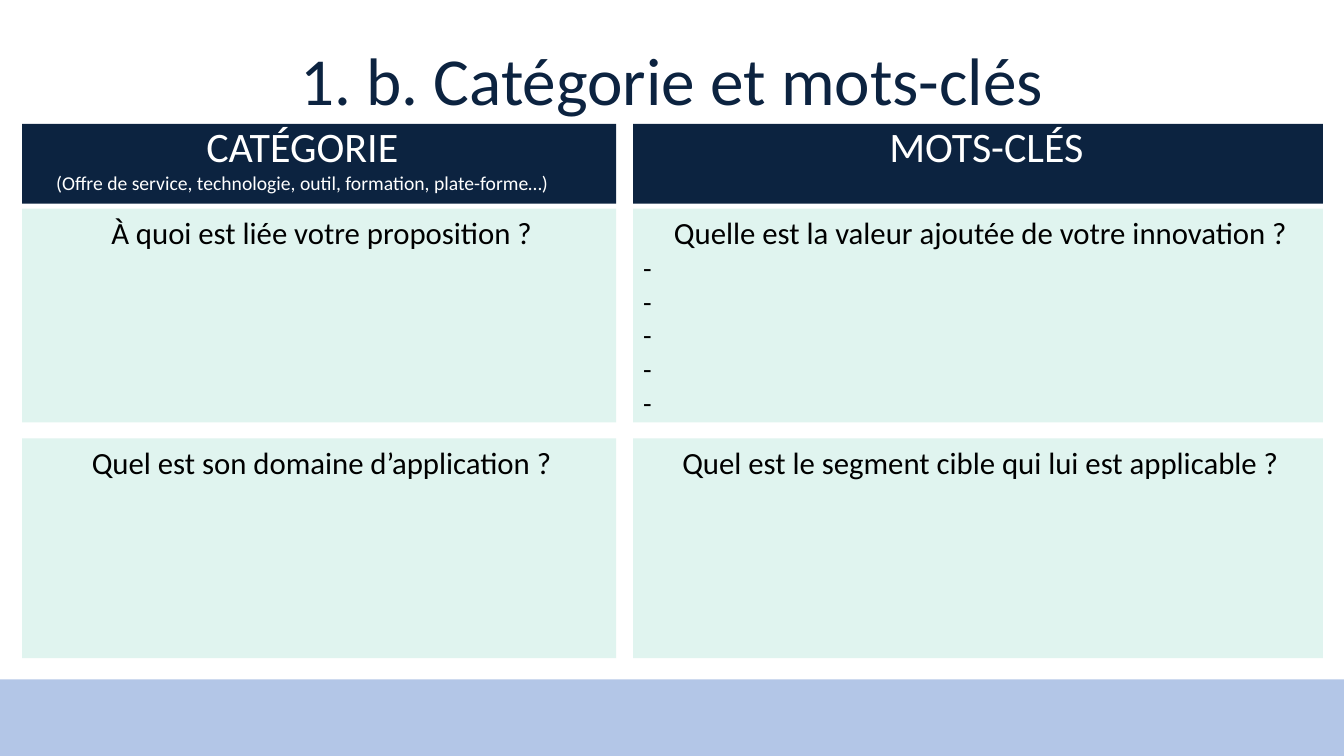
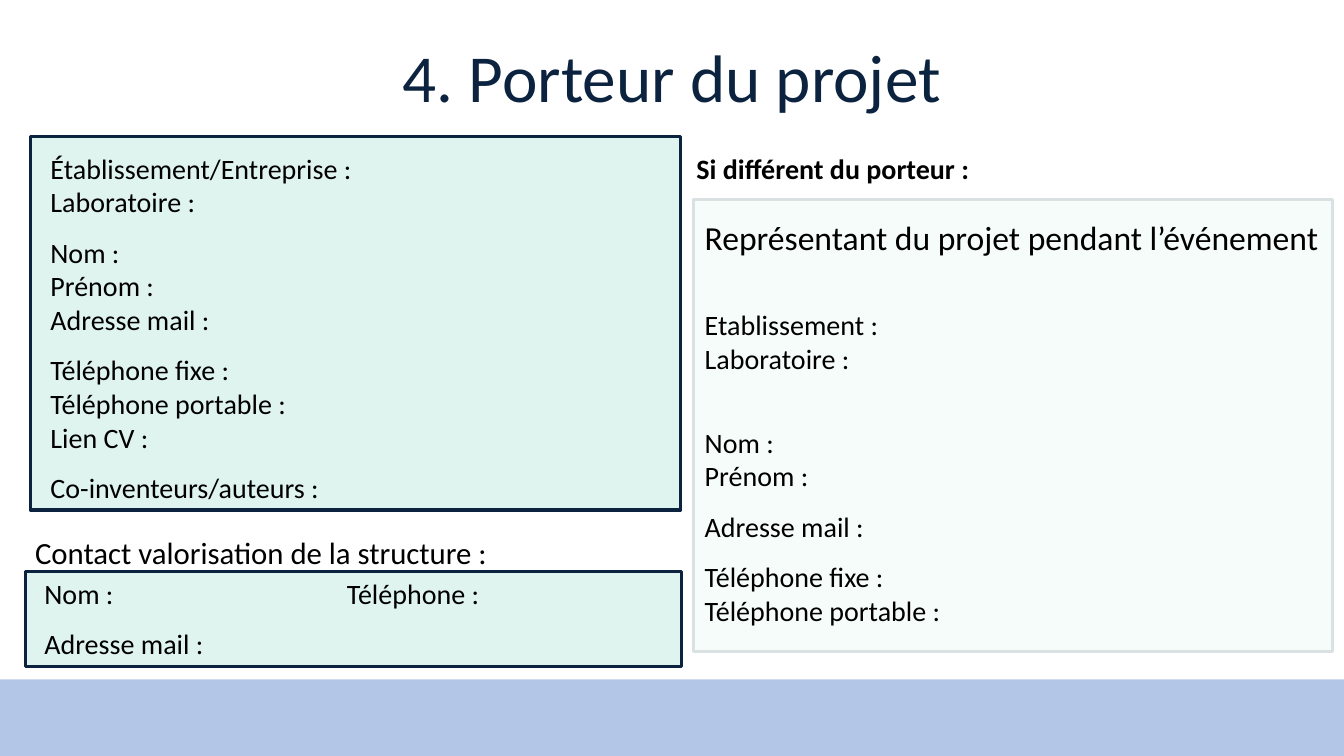
import pptx
import pptx.util
import pptx.dml.color
import pptx.enum.shapes
import pptx.enum.text
import pptx.oxml
import pptx.oxml.ns
import lxml.etree

Inches = pptx.util.Inches
Pt = pptx.util.Pt
ALIGN = pptx.enum.text.PP_ALIGN
ANCHOR = pptx.enum.text.MSO_ANCHOR
RECT = pptx.enum.shapes.MSO_SHAPE.RECTANGLE
FONT = "Calibri"
NAVY, MINT, PALE, GREY = "0C2340", "E0F4EF", "F6FCFA", "D9E1E2"
BLUE, WHITE, BLACK = "8FAADC", "FFFFFF", "000000"

MID = {"alignment": ALIGN.CENTER}
WIDE = {"line_spacing": 1.5}
APART = {"line_spacing": 1.5, "space_before": Pt(24)}

COLS = [(0.22, 5.89), (6.28, 6.84)]
ROWS = [(2.07, 2.12), (4.35, 2.18)]
HEAD = (1.23, 0.79)

LABELS = [
    ((0.02, 1.15, 5.91, 0.84), [
        ("CATÉGORIE", 30, MID),
        ("(Offre de service, technologie, outil, formation, plate-forme…)", 14, MID),
    ]),
    ((8.16, 1.15, 3.2, 0.61), [("MOTS-CLÉS", 30, MID)]),
]
CARDS = [
    [
        [("À quoi est liée votre proposition ?", 22, MID)],
        [("Quelle est la valeur ajoutée de votre innovation ?", 22, MID)]
        + [("-", 20, {})] * 5,
    ],
    [
        [("Quel est son domaine d’application ?", 22, MID)],
        [("Quel est le segment cible qui lui est applicable ?", 22, MID)],
    ],
]

OWNER = [
    ("Établissement/Entreprise :", 20, {}),
    ("Laboratoire :", 20, {}),
    ("Nom :", 20, WIDE),
    ("Prénom :", 20, {}),
    ("Adresse mail :", 20, {}),
    ("Téléphone fixe :", 20, WIDE),
    ("Téléphone portable :", 20, {}),
    ("Lien CV :", 20, {}),
    ("Co-inventeurs/auteurs :", 20, WIDE),
]
AGENT = [
    ("Représentant du projet pendant l’événement", 24, {}),
    ("Etablissement :", 20, APART),
    ("Laboratoire :", 20, {}),
    ("Nom :", 20, APART),
    ("Prénom :", 20, {}),
    ("Adresse mail :", 20, WIDE),
    ("Téléphone fixe :", 20, WIDE),
    ("Téléphone portable :", 20, {}),
]
CONTACT = [("Nom :\tTéléphone :", 20, {}), ("Adresse mail :", 20, WIDE)]
PANELS = [
    ((0.3, 1.35, 6.45, 3.71), OWNER, MINT, NAVY, (0.2, 0.15)),
    ((6.88, 1.98, 6.34, 4.48), AGENT, PALE, GREY, (0.11, 0.17)),
    ((0.25, 5.67, 6.51, 0.94), CONTACT, MINT, NAVY, (0.19, 0.05)),
]
NOTES = [
    ((6.81, 1.45, 6.03, 0.44), [("Si différent du porteur :", 20, {})], True),
    ((0.25, 5.06, 4.9, 0.6), [("Contact valorisation de la structure :", 22, WIDE)], False),
]
TAB = 3


def rgb(code):
    return pptx.dml.color.RGBColor.from_string(code)


def put(item, values):
    for name, value in values.items():
        setattr(item, name, value)


def spots(place):
    return [Inches(n) for n in place]


def write(frame, paras, color=BLACK, bold=False, inset=(0.1, 0.05)):
    left, top = inset
    put(frame, {
        "word_wrap": True,
        "vertical_anchor": ANCHOR.TOP,
        "margin_left": Inches(left),
        "margin_right": Inches(0.05),
        "margin_top": Inches(top),
        "margin_bottom": Inches(0.05),
    })
    for at, (text, size, style) in enumerate(paras):
        para = frame.add_paragraph() if at else frame.paragraphs[0]
        if "\t" in text:
            tabs = pptx.oxml.parse_xml(
                f'<a:tabLst {pptx.oxml.ns.nsdecls("a")}>'
                f'<a:tab pos="{Inches(TAB)}" algn="l"/></a:tabLst>')
            para._p.get_or_add_pPr().append(tabs)
        put(para, {"alignment": ALIGN.LEFT, **style})
        run = para.add_run()
        run.text = text
        put(run.font, {"name": FONT, "size": Pt(size), "bold": bold})
        run.font.color.rgb = rgb(color)


def block(slide, place, fill, line=None):
    shape = slide.shapes.add_shape(RECT, *spots(place))
    shape.shadow.inherit = False
    shape.fill.solid()
    shape.fill.fore_color.rgb = rgb(fill)
    if line:
        shape.line.color.rgb = rgb(line)
        shape.line.width = Pt(2.25)
    else:
        shape.line.fill.background()
    return shape


def label(slide, place, paras, color=BLACK, bold=False):
    box = slide.shapes.add_textbox(*spots(place))
    write(box.text_frame, paras, color, bold)


def start(deck, text, top):
    slide = deck.slides.add_slide(deck.slide_layouts[5])
    title = slide.shapes.title
    put(title, dict(zip(("left", "top", "width", "height"), spots((0, top, 13.33, 1.45)))))
    write(title.text_frame, [(text, 48, {**MID, "line_spacing": 0.9})], NAVY)
    put(title.text_frame, {
        "vertical_anchor": ANCHOR.MIDDLE,
        "margin_right": Inches(0.1),
        "auto_size": pptx.enum.text.MSO_AUTO_SIZE.NONE,
    })
    return slide


def share_band(deck, slide):
    band = block(slide, (0, 6.74, 13.33, 0.76), BLUE)
    tint = band.element.find(".//" + pptx.oxml.ns.qn("a:srgbClr"))
    lxml.etree.SubElement(tint, pptx.oxml.ns.qn("a:alpha"), val="67000")
    band.element.nvSpPr.cNvPr.set("id", "99")
    deck.slide_layouts[5].shapes.element.append(band.element)


def topic(slide):
    for left, width in COLS:
        block(slide, (left, HEAD[0], width, HEAD[1]), NAVY)
    for place, paras in LABELS:
        label(slide, place, paras, WHITE)
    for (top, height), cards in zip(ROWS, CARDS):
        for (left, width), paras in zip(COLS, cards):
            card = block(slide, (left, top, width, height), MINT)
            write(card.text_frame, paras)


def people(slide):
    for place, paras, fill, line, inset in PANELS:
        panel = block(slide, place, fill, line)
        write(panel.text_frame, paras, inset=inset)
    for place, paras, bold in NOTES:
        label(slide, place, paras, bold=bold)


def main():
    deck = pptx.Presentation()
    put(deck, {"slide_width": Inches(13.33), "slide_height": Inches(7.5)})
    first = start(deck, "1. b. Catégorie et mots-clés", 0.11)
    share_band(deck, first)
    topic(first)
    people(start(deck, "4. Porteur du projet", 0.08))
    deck.save("out.pptx")


if __name__ == "__main__":
    main()
